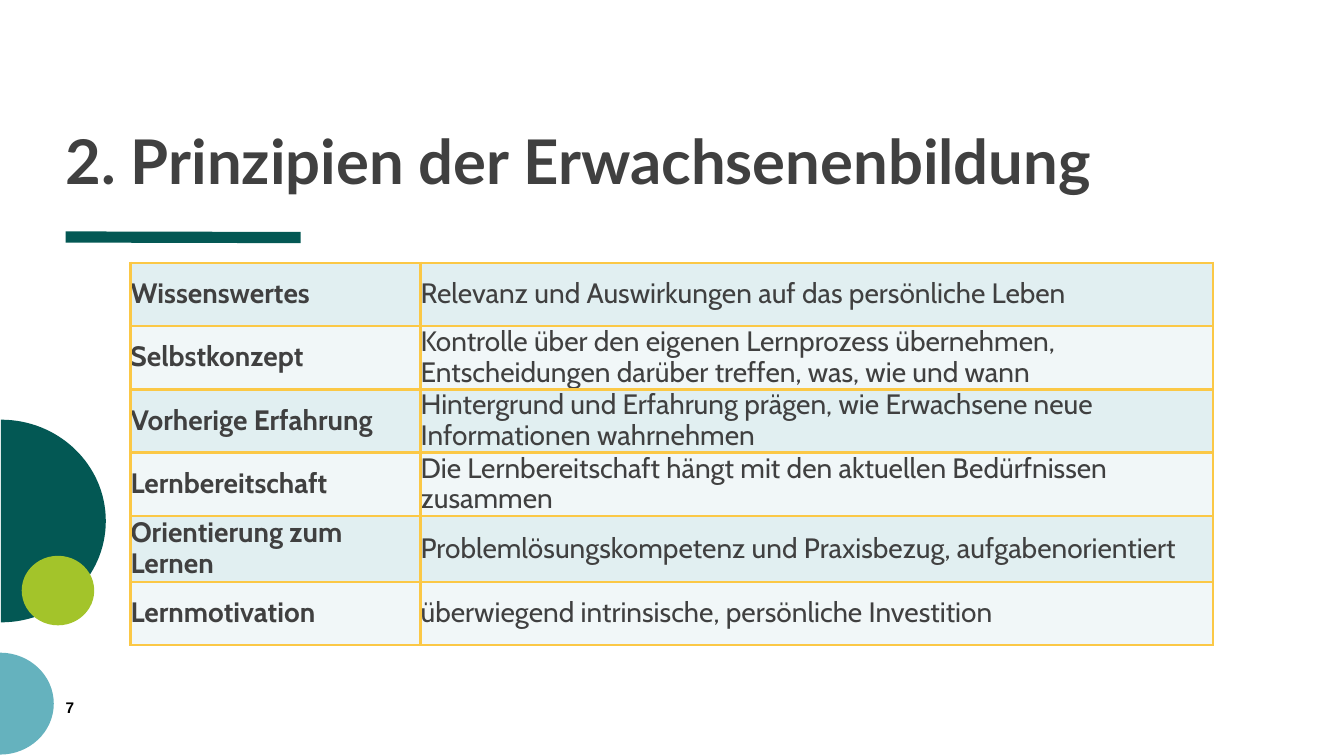
from lxml.etree import SubElement
from pptx import Presentation
from pptx.dml.color import RGBColor
from pptx.enum.shapes import MSO_CONNECTOR, MSO_SHAPE
from pptx.enum.text import MSO_ANCHOR
from pptx.oxml.ns import qn
from pptx.util import Pt

# Content
TITLE = "2. Prinzipien der Erwachsenenbildung"
PAGE_NUMBER = "7"
PRINCIPLES = [
    ("Wissenswertes", "Relevanz und Auswirkungen auf das persönliche Leben"),
    ("Selbstkonzept", "Kontrolle über den eigenen Lernprozess übernehmen, "
                      "Entscheidungen darüber treffen, was, wie und wann"),
    ("Vorherige Erfahrung", "Hintergrund und Erfahrung prägen, wie Erwachsene "
                            "neue Informationen wahrnehmen"),
    ("Lernbereitschaft", "Die Lernbereitschaft hängt mit den aktuellen "
                         "Bedürfnissen zusammen"),
    ("Orientierung zum Lernen", "Problemlösungskompetenz und Praxisbezug, "
                                "aufgabenorientiert"),
    ("Lernmotivation", "überwiegend intrinsische, persönliche Investition"),
]


class Theme:
    petrol = RGBColor.from_string("035854")
    sky = RGBColor.from_string("65B2BE")
    lime = RGBColor.from_string("A3C42A")
    ink = RGBColor.from_string("404040")
    black = RGBColor.from_string("000000")
    bands = [RGBColor.from_string("E1EFF1"), RGBColor.from_string("F1F7F8")]
    border = "FBC846"
    title_size, table_size, number_size = Pt(44), Pt(20), Pt(11)


# Layout in points
LEFT = 46.8
COLUMN_WIDTHS = [207.2, 566]
ROW_HEIGHTS = [45.2, 45.2, 45.2, 45.2, 47.2, 45.2]
# centre x, centre y, horizontal radius, vertical radius, colour
HALF_DISCS = [
    (0.7, 372.2, 74.9, 72.4, Theme.petrol),
    (0, 502.6, 38.4, 36.4, Theme.sky),
]

deck = Presentation()
deck.slide_width, deck.slide_height = Pt(960), Pt(540)
slide = deck.slides.add_slide(deck.slide_layouts[6])
shapes = slide.shapes


def paint(shape, color):
    shape.fill.solid()
    shape.fill.fore_color.rgb = color
    shape.line.fill.background()
    shape.shadow.inherit = False


def style(paragraph, font_name, size, color, bold):
    font = paragraph.font
    font.name, font.size, font.bold = font_name, size, bold
    font.color.rgb = color


def add_text(text, left, top, width, height, anchor, wrap):
    frame = shapes.add_textbox(Pt(left), Pt(top), Pt(width), Pt(height)).text_frame
    frame.margin_left = frame.margin_top = frame.margin_right = frame.margin_bottom = 0
    frame.vertical_anchor, frame.word_wrap = anchor, wrap
    frame.text = text
    return frame.paragraphs[0]


def add_half_disc(center_x, center_y, radius_x, radius_y, color):
    top, bottom = center_y - radius_y, center_y + radius_y
    outline = shapes.build_freeform(Pt(center_x), Pt(top))
    outline.add_line_segments([(Pt(center_x + radius_x), Pt(center_y)),
                               (Pt(center_x), Pt(bottom))], close=True)
    half_disc = outline.convert_to_shape()
    paint(half_disc, color)
    # Turn the two straight sides into quarter arcs
    width, middle = Pt(radius_x), Pt(radius_y)
    bend_x, bend_y = int(width * 0.5523), int(middle * 0.5523)
    quarters = [
        [(bend_x, 0), (width, middle - bend_y), (width, middle)],
        [(width, middle + bend_y), (bend_x, 2 * middle), (0, 2 * middle)],
    ]
    sides = list(half_disc._element.iter(qn("a:lnTo")))
    for side, quarter in zip(sides, quarters):
        curve = SubElement(side.getparent(), qn("a:cubicBezTo"))
        for x, y in quarter:
            SubElement(curve, qn("a:pt"), x=str(x), y=str(y))
        side.getparent().replace(side, curve)


def add_borders(cell):
    properties = cell._tc.get_or_add_tcPr()
    for side in ("lnL", "lnR", "lnT", "lnB"):
        edge = SubElement(properties, qn(f"a:{side}"), w=str(Pt(2)))
        fill = SubElement(edge, qn("a:solidFill"))
        SubElement(fill, qn("a:srgbClr"), val=Theme.border)


# Rule under the title
rule = shapes.add_connector(MSO_CONNECTOR.STRAIGHT, Pt(LEFT), Pt(169.3), Pt(214.8), Pt(169.7))
rule.line.color.rgb = Theme.petrol
rule.line.width = Pt(8)
SubElement(rule._element.spPr, qn("a:effectLst"))

# Discs on the left edge
for half_disc_layout in HALF_DISCS:
    add_half_disc(*half_disc_layout)
lime_disc = shapes.add_shape(MSO_SHAPE.OVAL, Pt(15.5), Pt(397), Pt(51.8), Pt(49.7))
paint(lime_disc, Theme.lime)

# Title
title = add_text(TITLE, LEFT, 7.9, 856, 132.5, MSO_ANCHOR.BOTTOM, True)
title.line_spacing = 0.8
style(title, "Lato", Theme.title_size, Theme.ink, True)

# Table of principles
table = shapes.add_table(len(PRINCIPLES), len(COLUMN_WIDTHS), Pt(93.3), Pt(187.7),
                         Pt(sum(COLUMN_WIDTHS)), Pt(sum(ROW_HEIGHTS))).table
table.first_row = table.horz_banding = False
for column, width in zip(table.columns, COLUMN_WIDTHS):
    column.width = Pt(width)
for row_index, principle in enumerate(PRINCIPLES):
    table.rows[row_index].height = Pt(ROW_HEIGHTS[row_index])
    for column_index, text in enumerate(principle):
        cell = table.cell(row_index, column_index)
        cell.margin_left = cell.margin_top = cell.margin_right = cell.margin_bottom = 0
        cell.vertical_anchor = MSO_ANCHOR.MIDDLE
        add_borders(cell)
        cell.fill.solid()
        cell.fill.fore_color.rgb = Theme.bands[row_index % 2]
        cell.text = text
        paragraph = cell.text_frame.paragraphs[0]
        paragraph.line_spacing = 0.9
        style(paragraph, "Cabin", Theme.table_size, Theme.ink, column_index == 0)

# Page number
number = add_text(PAGE_NUMBER, LEFT, 498.6, 10, 13, MSO_ANCHOR.TOP, False)
style(number, "Arial", Theme.number_size, Theme.black, True)

deck.save("out.pptx")
